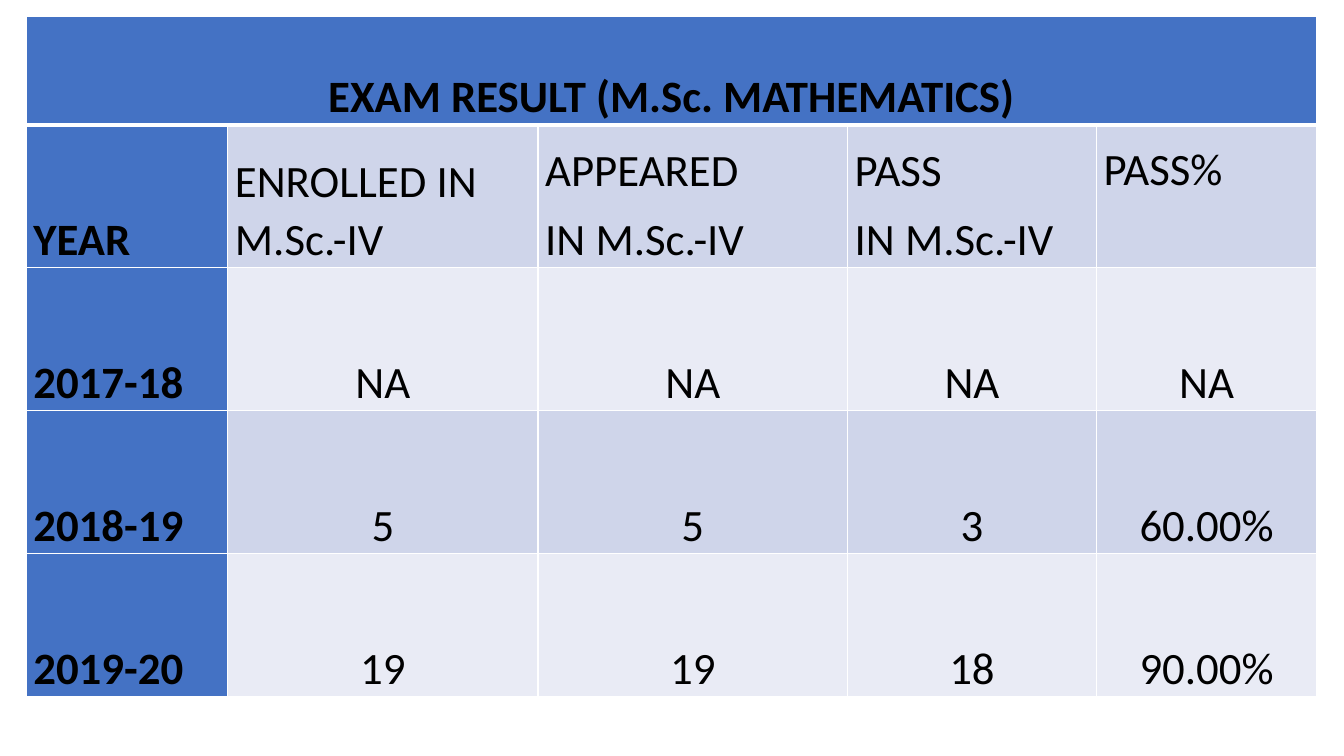
from lxml.etree import SubElement as Sub, Element
from pptx import Presentation
from pptx.dml.color import RGBColor
from pptx.enum.text import MSO_ANCHOR as Anchor, PP_ALIGN as Align
from pptx.oxml.ns import qn
from pptx.util import Cm, Pt

BLACK = RGBColor(0x00, 0x00, 0x00)
WHITE = RGBColor(0xFF, 0xFF, 0xFF)
BLUE = RGBColor(0x44, 0x72, 0xC4)
DARK = RGBColor(0xCF, 0xD5, 0xEA)
LIGHT = RGBColor(0xE9, 0xEB, 0xF5)
RUST = RGBColor(0xBD, 0x58, 0x2C)

TITLE = "EXAM RESULT (M.Sc. MATHEMATICS)"
HEADS = ["YEAR", "ENROLLED IN M.Sc.-IV", "APPEARED\nIN M.Sc.-IV",
         "PASS\nIN M.Sc.-IV", "PASS%"]
YEARS = [
    ["2017-18", "NA", "NA", "NA", "NA"],
    ["2018-19", "5", "5", "3", "60.00%"],
    ["2019-20", "19", "19", "18", "90.00%"],
]
WIDTHS = [5.08, 7.82, 7.8, 6.27, 5.56]
TOP_ROW, ROW = 2.74, 3.6


def assign(item, values):
    for name, value in values.items():
        setattr(item, name, value)


def stroke(line, color):
    fill = Sub(line, qn("a:solidFill"))
    Sub(fill, qn("a:srgbClr"), val=str(color))


class Deck:
    font = {"name": "Calibri", "size": Pt(32)}
    para = {"line_spacing": 1.07, "space_after": Pt(8)}
    box = {"vertical_anchor": Anchor.BOTTOM, "margin_left": Cm(0.18),
           "margin_right": Cm(0.18), "margin_top": 0, "margin_bottom": 0}

    def __init__(self):
        self.file = Presentation()
        assign(self.file, {"slide_width": Cm(33.87), "slide_height": Cm(19.05)})
        self.slide = self.file.slides.add_slide(self.file.slide_layouts[6])

    def grid(self, left, top, widths, heights):
        frame = self.slide.shapes.add_table(
            len(heights), len(widths), Cm(left), Cm(top),
            Cm(sum(widths)), Cm(sum(heights)))
        table = frame.table
        for col, width in zip(table.columns, widths):
            col.width = Cm(width)
        for row, height in zip(table.rows, heights):
            row.height = Cm(height)
        return table

    def edge(self, cell, **sides):
        props = cell._tc.get_or_add_tcPr()
        for side in "LRTB":
            line = Sub(props, qn(f"a:ln{side}"), w=str(Pt(sides.get(side, 1))))
            stroke(line, WHITE)

    def paint(self, cell, color):
        cell.fill.solid()
        cell.fill.fore_color.rgb = color

    def label(self, cell, text, align=Align.LEFT, bold=False, rim=False):
        assign(cell, self.box)
        cell.text = text
        for para in cell.text_frame.paragraphs:
            assign(para, {**self.para, "alignment": align})
            for run in para.runs:
                assign(run.font, {**self.font, "bold": bold})
                run.font.color.rgb = BLACK
                if rim:
                    line = Element(qn("a:ln"), w=str(Pt(0.52)))
                    stroke(line, RUST)
                    run._r.get_or_add_rPr().insert(0, line)


def main():
    deck = Deck()
    table = deck.grid(0.66, 0.41, WIDTHS, [TOP_ROW] + [ROW] * 4)

    # Title row across all columns
    title = table.cell(0, 0)
    title.merge(table.cell(0, len(WIDTHS) - 1))
    for col in range(len(WIDTHS)):
        cell = table.cell(0, col)
        deck.edge(cell, B=3)
        deck.paint(cell, BLUE)
    deck.label(title, TITLE, Align.CENTER, bold=True)

    # Column heads and yearly results
    for i, row in enumerate([HEADS] + YEARS, 1):
        for j, text in enumerate(row):
            cell = table.cell(i, j)
            first = j == 0
            deck.edge(cell, T=3 if i == 1 else 1)
            deck.paint(cell, BLUE if first else DARK if i % 2 else LIGHT)
            align = Align.LEFT if first or i == 1 else Align.CENTER
            deck.label(cell, text, align, bold=first, rim=first)

    # Lift the last head to the first line of its neighbours
    table.cell(1, 4).margin_bottom = Cm(1.76)

    deck.file.save("out.pptx")


if __name__ == "__main__":
    main()
